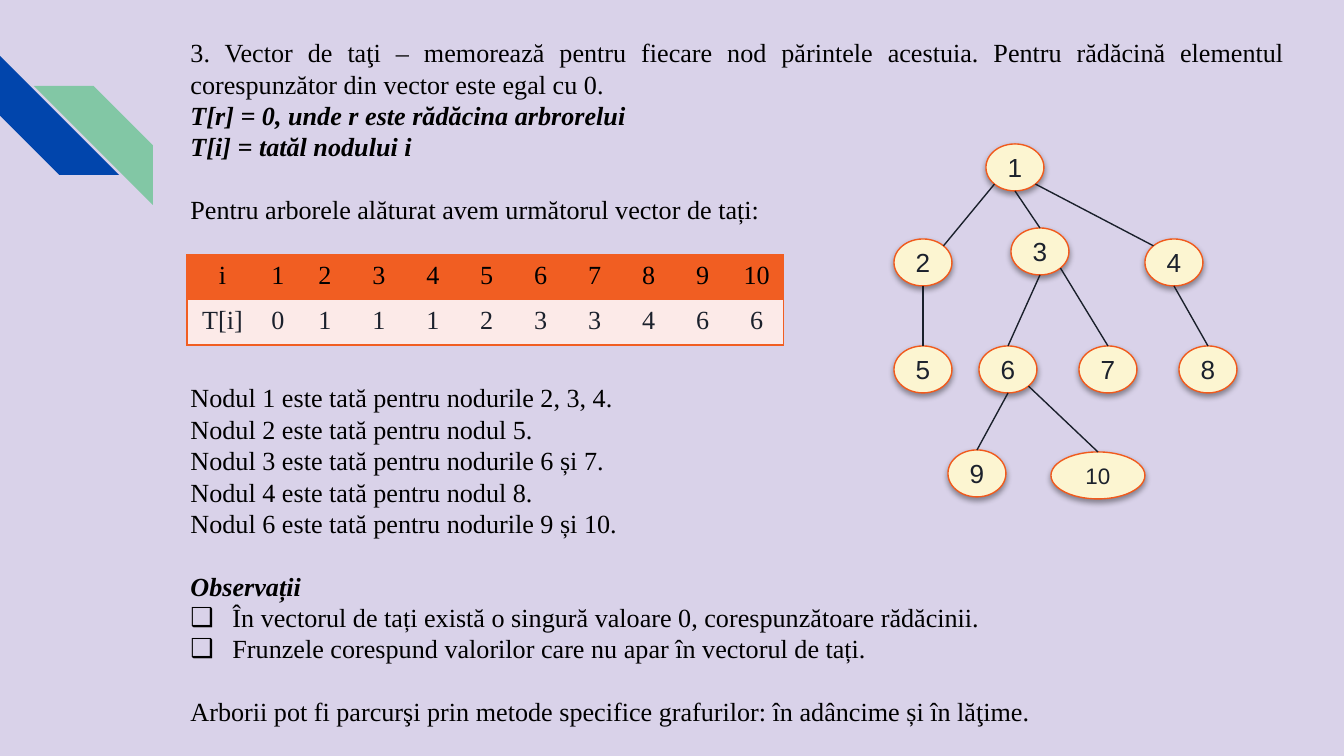
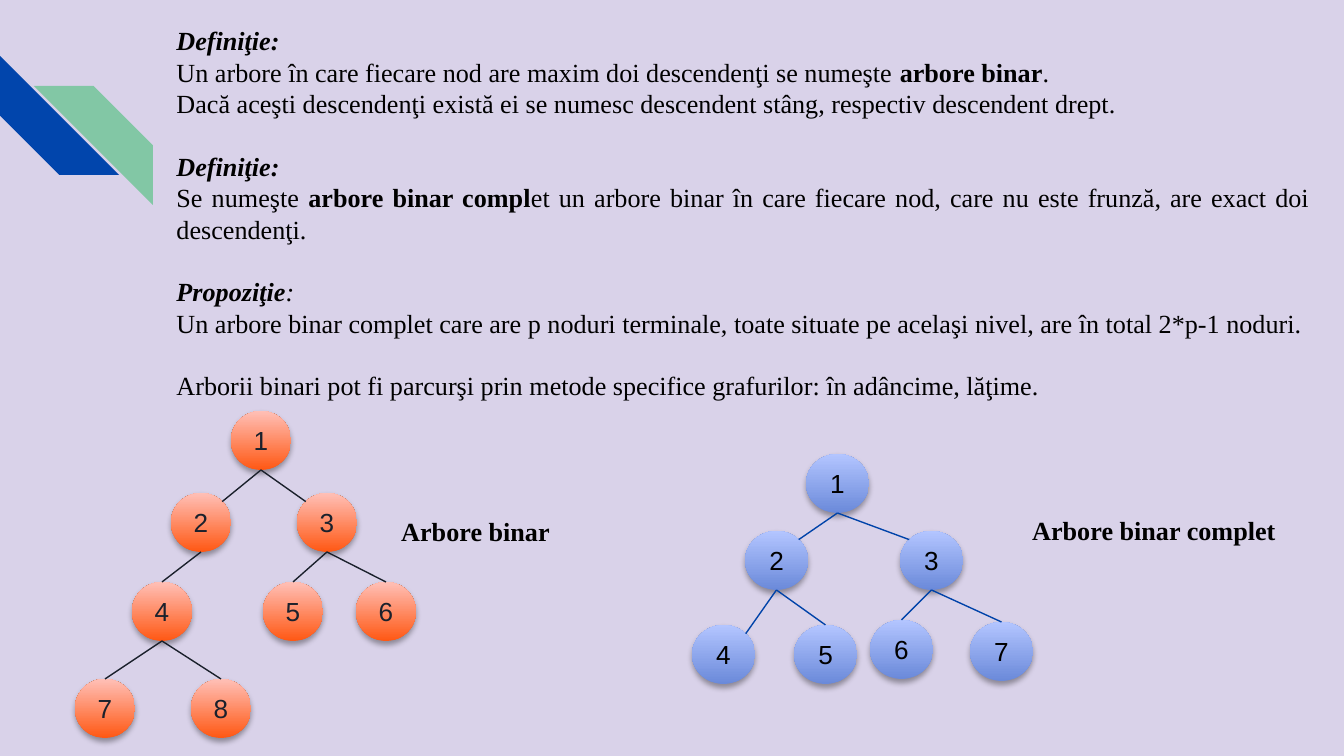
import math

import lxml.etree
import pptx
import pptx.dml.color
import pptx.enum.shapes
import pptx.enum.text
import pptx.oxml.ns
import pptx.util

RGB = pptx.dml.color.RGBColor
SHAPE = pptx.enum.shapes.MSO_SHAPE
ALIGN = pptx.enum.text.PP_ALIGN
qn = pptx.oxml.ns.qn

LAVENDER = RGB(0xD9, 0xD2, 0xE9)
BLUE = RGB(0x01, 0x45, 0xAC)
GREEN = RGB(0x82, 0xC7, 0xA5)
BLACK = RGB(0, 0, 0)
INK = RGB(0x1B, 0x21, 0x2C)
EDGE_DARK = RGB(0x1A, 0x20, 0x2B)
EDGE_BLUE = RGB(0x00, 0x43, 0xA9)
CREAM = RGB(0xFC, 0xF5, 0xD1)
ORANGE = RGB(0xF1, 0x5A, 0x1C)
TABLE_ORANGE = RGB(0xF1, 0x5E, 0x22)
TABLE_PINK = RGB(0xFC, 0xEA, 0xE8)
CORAL = (RGB(0xFF, 0x58, 0x14), RGB(0xFF, 0xC0, 0xB7))
PERIWINKLE = (RGB(0x6B, 0x8A, 0xDA), RGB(0xB3, 0xC5, 0xFF))

SERIF, SANS = "Times New Roman", "Arial"
PX_PER_INCH = 134.4
LINE_PT = 16.8
NO_GRID_STYLE = "{2D5ABB26-0587-4C30-8999-92F81FD0307C}"

# Paragraphs: (runs, blank lines above, bulleted); a run is (text, "b"/"i" flags).
FATHER_TEXT = [
    ([("3. Vector de taţi – memorează pentru fiecare nod părintele acestuia. "
       "Pentru rădăcină elementul corespunzător din vector este egal cu 0.", "")], 0, False),
    ([("T[r] = 0, unde r este rădăcina arbrorelui", "bi")], 0, False),
    ([("T[i] = tatăl nodului i", "bi")], 0, False),
    ([("Pentru arborele alăturat avem următorul vector de tați:", "")], 1, False),
    ([("Nodul 1 este tată pentru nodurile 2, 3, 4.", "")], 5, False),
    ([("Nodul 2 este tată pentru nodul 5.", "")], 0, False),
    ([("Nodul 3 este tată pentru nodurile 6 și 7.", "")], 0, False),
    ([("Nodul 4 este tată pentru nodul 8.", "")], 0, False),
    ([("Nodul 6 este tată pentru nodurile 9 și 10.", "")], 0, False),
    ([("Observații", "bi")], 1, False),
    ([("În vectorul de tați există o singură valoare 0, corespunzătoare rădăcinii.", "")], 0, True),
    ([("Frunzele corespund valorilor care nu apar în vectorul de tați.", "")], 0, True),
    ([("Arborii pot fi parcurşi prin metode specifice grafurilor: "
       "în adâncime și în lăţime.", "")], 1, False),
]
BINARY_TEXT = [
    ([("Definiţie:", "bi")], 0, False),
    ([("Un arbore în care fiecare nod are maxim doi descendenţi se numeşte ", ""),
      ("arbore binar", "b"), (".", "")], 0, False),
    ([("Dacă aceşti descendenţi există ei se numesc descendent stâng, "
       "respectiv descendent drept.", "")], 0, False),
    ([("Definiţie:", "bi")], 1, False),
    ([("Se numeşte ", ""), ("arbore binar compl", "b"),
      ("et un arbore binar în care fiecare nod, care nu este frunză, "
       "are exact doi descendenţi.", "")], 0, False),
    ([("Propoziţie", "bi"), (":", "i")], 1, False),
    ([("Un arbore binar complet care are p noduri terminale, toate situate pe acelaşi nivel, "
       "are în total 2*p-1 noduri.", "")], 0, False),
    ([("Arborii binari pot fi parcurşi prin metode specifice grafurilor: "
       "în adâncime, lăţime.", "")], 1, False),
]
FATHERS = [0, 1, 1, 1, 2, 3, 3, 4, 6, 6]

# Ellipse connection sites run counter-clockwise from the top in steps of 45 degrees.
TOP, TOP_LEFT, BOTTOM_LEFT, BOTTOM, BOTTOM_RIGHT, TOP_RIGHT = 0, 1, 3, 4, 5, 7

# Nodes: label -> (left, top) in the tree; edges: (parent, site, child, site).
GENERAL_NODES = {1: (92, 0), 2: (0, 95), 3: (117, 84), 4: (251, 95), 5: (0, 202),
                 6: (85, 202), 7: (185, 202), 8: (285, 202), 9: (54, 306), 10: (157, 308)}
GENERAL_EDGES = [(1, BOTTOM_LEFT, 2, TOP_RIGHT), (1, BOTTOM, 3, TOP),
                 (1, BOTTOM_RIGHT, 4, TOP_LEFT), (2, BOTTOM, 5, TOP), (3, BOTTOM, 6, TOP),
                 (3, BOTTOM_RIGHT, 7, TOP), (4, BOTTOM, 8, TOP), (6, BOTTOM, 9, TOP),
                 (6, BOTTOM_RIGHT, 10, TOP)]
BINARY_NODES = {1: (156, 0), 2: (96, 82), 3: (222, 82), 4: (57, 171),
                5: (188, 171), 6: (281, 171), 7: (0, 268), 8: (116, 268)}
BINARY_EDGES = [(1, BOTTOM, 2, TOP_RIGHT), (1, BOTTOM, 3, TOP_LEFT), (2, BOTTOM, 4, TOP),
                (3, BOTTOM, 5, TOP), (3, BOTTOM, 6, TOP), (4, BOTTOM, 7, TOP),
                (4, BOTTOM, 8, TOP)]
COMPLETE_NODES = {1: (114, 0), 2: (53, 77), 3: (208, 77), 4: (0, 171),
                  5: (102, 171), 6: (178, 166), 7: (278, 168)}
COMPLETE_EDGES = [(1, BOTTOM, 2, TOP_RIGHT), (1, BOTTOM, 3, TOP_LEFT),
                  (2, BOTTOM, 4, TOP_RIGHT), (2, BOTTOM, 5, TOP), (3, BOTTOM, 6, TOP),
                  (3, BOTTOM, 7, TOP)]


def px(n):
    return pptx.util.Emu(round(n * 914400 / PX_PER_INCH))


def sub(parent, tag, **attrs):
    return lxml.etree.SubElement(parent, qn(tag), {k: str(v) for k, v in attrs.items()})


def set_font(p, name, color, size=14):
    p.font.name = name
    p.font.size = pptx.util.Pt(size)
    p.font.color.rgb = color


def write_paragraph(p, runs, gap=0, bullet=False, align=ALIGN.JUSTIFY):
    p.alignment = align
    p.line_spacing = pptx.util.Pt(LINE_PT)
    p.space_before = pptx.util.Pt(gap * LINE_PT)
    p.space_after = pptx.util.Pt(0)
    pPr = p._p.get_or_add_pPr()
    indent = px(42) if bullet else 0
    pPr.set("marL", str(indent))
    pPr.set("indent", str(-indent))
    if bullet:
        sub(sub(pPr, "a:buClr"), "a:srgbClr", val=BLACK)
        sub(pPr, "a:buChar", char="❑")
    else:
        sub(pPr, "a:buNone")
    set_font(p, SERIF, BLACK)
    for text, flags in runs:
        r = p.add_run()
        r.text = text
        r.font.bold = "b" in flags
        r.font.italic = "i" in flags


def add_body(s, box, paragraphs):
    body = s.placeholders[1]
    body.left, body.top, body.width, body.height = map(px, box)
    tf = body.text_frame
    tf.word_wrap = True
    tf.auto_size = pptx.enum.text.MSO_AUTO_SIZE.NONE
    tf.vertical_anchor = pptx.enum.text.MSO_ANCHOR.TOP
    for i, (runs, gap, bullet) in enumerate(paragraphs):
        write_paragraph(tf.add_paragraph() if i else tf.paragraphs[0], runs, gap, bullet)


def add_caption(s, box, text):
    tf = s.shapes.add_textbox(*map(px, box)).text_frame
    write_paragraph(tf.paragraphs[0], [(text, "b")], align=ALIGN.LEFT)


def add_shadow(shape, alpha, distance):
    shape.shadow.inherit = False
    effects = shape.element.spPr.find(qn("a:effectLst"))
    shadow = sub(effects, "a:outerShdw", blurRad=pptx.util.Pt(3.1),
                 dist=pptx.util.Pt(distance), dir=5400000, rotWithShape=0)
    sub(sub(shadow, "a:srgbClr", val=BLACK), "a:alpha", val=alpha * 1000)


def add_node(shapes, box, label, fill, color):
    """A pair of colours as fill gives a gradient node without an outline."""
    node = shapes.add_shape(SHAPE.OVAL, *map(px, box))
    if isinstance(fill, RGB):
        node.fill.solid()
        node.fill.fore_color.rgb = fill
        node.line.color.rgb = ORANGE
        node.line.width = pptx.util.Pt(0.75)
        add_shadow(node, 38, 1.6)
    else:
        node.fill.gradient()
        node.fill.gradient_angle = 90
        for stop, rgb in zip(node.fill.gradient_stops, fill):
            stop.color.rgb = rgb
        node.line.fill.background()
        add_shadow(node, 35, 1.8)
    tf = node.text_frame
    tf.margin_left = tf.margin_right = tf.margin_top = tf.margin_bottom = 0
    tf.vertical_anchor = pptx.enum.text.MSO_ANCHOR.MIDDLE
    p = tf.paragraphs[0]
    p.text = str(label)
    p.alignment = ALIGN.CENTER
    set_font(p, SANS, color, 12 if label > 9 else 14)
    return node


def site_point(node, site):
    angle = math.radians(45 * site)
    rx, ry = node.width / 2, node.height / 2
    return (round(node.left + rx - rx * math.sin(angle)),
            round(node.top + ry - ry * math.cos(angle)))


def add_edge(shapes, parent, out_site, child, in_site, color):
    edge = shapes.add_connector(pptx.enum.shapes.MSO_CONNECTOR.STRAIGHT,
                                *site_point(parent, out_site), *site_point(child, in_site))
    edge.line.color.rgb = color
    edge.line.width = pptx.util.Pt(0.75)
    sub(edge.element.spPr, "a:effectLst")
    links = edge.element.nvCxnSpPr.cNvCxnSpPr
    sub(links, "a:stCxn", id=parent.shape_id, idx=out_site)
    sub(links, "a:endCxn", id=child.shape_id, idx=in_site)


def add_tree(s, origin, node_size, nodes, edges, fill, color, edge_color, wide=None):
    """Nodes with two-digit labels take the width given as wide."""
    left, top = origin
    width, height = node_size
    shapes = s.shapes.add_group_shape().shapes
    drawn = {}
    for label, (x, y) in nodes.items():
        box = (left + x, top + y, wide if label > 9 else width, height)
        drawn[label] = add_node(shapes, box, label, fill, color)
    for parent, out_site, child, in_site in edges:
        add_edge(shapes, drawn[parent], out_site, drawn[child], in_site, edge_color)


def add_cell_border(cell, side):
    ln = lxml.etree.Element(qn(f"a:{side}"), {"w": str(pptx.util.Pt(1))})
    sub(sub(ln, "a:solidFill"), "a:srgbClr", val=TABLE_ORANGE)
    tcPr = cell._tc.get_or_add_tcPr()
    tcPr.insert(len(tcPr.findall("*")) - 1, ln)  # borders go before the fill


def add_father_table(s, left, top):
    widths = [71, 40] + [54] * 9
    rows = [["i", *range(1, 11)], ["T[i]", *FATHERS]]
    row_styles = [(TABLE_ORANGE, BLACK), (TABLE_PINK, INK)]
    frame = s.shapes.add_table(2, len(widths), px(left), px(top), px(sum(widths)), px(90))
    table = frame.table
    table.first_row = table.horz_banding = False
    table._tbl.tblPr.find(qn("a:tableStyleId")).text = NO_GRID_STYLE
    for column, width in zip(table.columns, widths):
        column.width = px(width)
    for r, (values, (fill, color)) in enumerate(zip(rows, row_styles)):
        table.rows[r].height = px(45)
        for c, value in enumerate(values):
            cell = table.cell(r, c)
            cell.margin_left = cell.margin_right = px(6)
            cell.fill.solid()
            cell.fill.fore_color.rgb = fill
            if c == 0:
                add_cell_border(cell, "lnL")
            if c == len(widths) - 1:
                add_cell_border(cell, "lnR")
            add_cell_border(cell, "lnB" if r else "lnT")
            p = cell.text_frame.paragraphs[0]
            p.text = str(value)
            p.alignment = ALIGN.CENTER
            set_font(p, SERIF, color)


def decorate_layout(s):
    """Put the corner stripes on the layout of slide s."""
    for x, y, color in [(0, 56, BLUE), (34, 86, GREEN)]:
        stripe = s.shapes.add_shape(SHAPE.DIAGONAL_STRIPE, px(x), px(y), px(119), px(119))
        stripe.fill.solid()
        stripe.fill.fore_color.rgb = color
        stripe.line.fill.background()
        stripe.shadow.inherit = False
        if color == BLUE:
            stripe.rotation = 270
        else:
            stripe.element.spPr.xfrm.set("flipH", "1")
        s.slide_layout.shapes.element.append(stripe.element)


def new_slide(prs):
    s = prs.slides.add_slide(prs.slide_layouts[1])
    title = s.shapes.title.element
    title.getparent().remove(title)
    return s


def father_vector_slide(prs):
    s = new_slide(prs)
    decorate_layout(s)
    add_body(s, (177, 30, 1122, 710), FATHER_TEXT)
    add_tree(s, (894, 144), (58, 47), GENERAL_NODES, GENERAL_EDGES,
             CREAM, INK, EDGE_DARK, wide=94)
    add_father_table(s, 187, 255)


def binary_tree_slide(prs):
    s = new_slide(prs)
    add_body(s, (163, 18, 1161, 394), BINARY_TEXT)
    add_tree(s, (75, 411), (60, 59), BINARY_NODES, BINARY_EDGES, CORAL, INK, EDGE_DARK)
    add_tree(s, (692, 454), (63, 59), COMPLETE_NODES, COMPLETE_EDGES,
             PERIWINKLE, BLACK, EDGE_BLUE)
    add_caption(s, (388, 509, 181, 46), "Arbore binar")
    add_caption(s, (1019, 508, 281, 46), "Arbore binar complet")


def main():
    prs = pptx.Presentation()
    prs.slide_width, prs.slide_height = px(1344), px(756)
    background = prs.slide_master.background.fill
    background.solid()
    background.fore_color.rgb = LAVENDER
    father_vector_slide(prs)
    binary_tree_slide(prs)
    prs.save("out.pptx")


if __name__ == "__main__":
    main()
